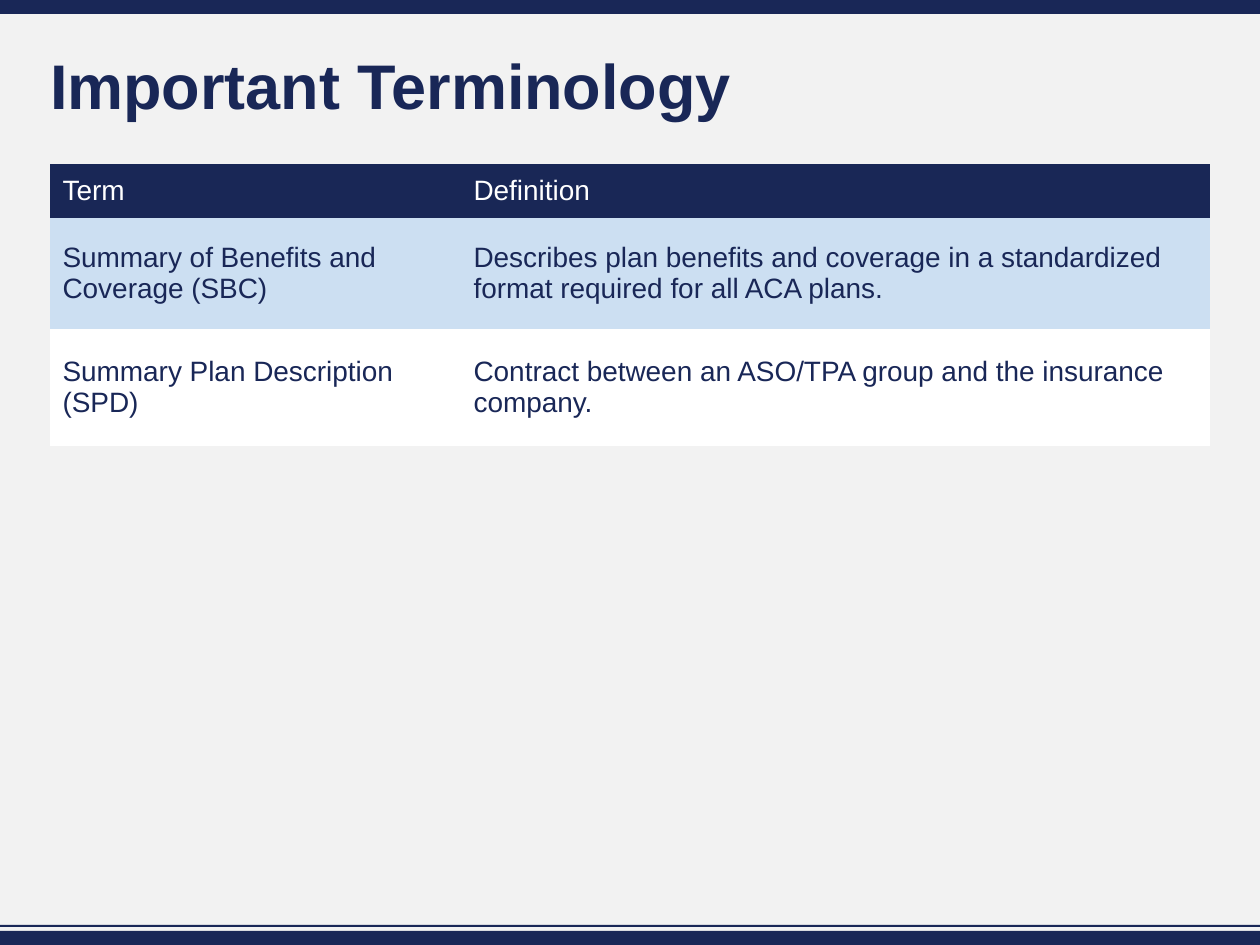
"""Build the Important Terminology slide with its table of terms."""
from pptx import Presentation
from pptx.dml.color import RGBColor
from pptx.enum.shapes import MSO_SHAPE
from pptx.enum.text import MSO_ANCHOR, PP_ALIGN
from pptx.util import Pt

TITLE = "Important Terminology"
ROWS = [
    ("Term", "Definition"),
    ("Summary of Benefits and Coverage (SBC)",
     "Describes plan benefits and coverage in a standardized format required for all ACA plans."),
    ("Summary Plan Description (SPD)",
     "Contract between an ASO/TPA group and the insurance company."),
]

NAVY = RGBColor(0x19, 0x27, 0x57)
HEADER_NAVY = RGBColor(0x19, 0x27, 0x56)
PALE_BLUE = RGBColor(0xCC, 0xDF, 0xF2)
WHITE = RGBColor(0xFF, 0xFF, 0xFF)
LIGHT_GREY = RGBColor(0xF2, 0xF2, 0xF2)
ROW_STYLES = [(HEADER_NAVY, WHITE), (PALE_BLUE, NAVY), (WHITE, NAVY)]

FONT = "Arial"
PX = 914400 // 126
PAGE_WIDTH, PAGE_HEIGHT = 1260, 945
MARGIN = 50
CONTENT_WIDTH = PAGE_WIDTH - 2 * MARGIN
BAR_HEIGHT = 14
BARS = [(0, BAR_HEIGHT), (PAGE_HEIGHT - BAR_HEIGHT, BAR_HEIGHT), (925, 2)]
TABLE_TOP = 164
COLUMN_WIDTHS = [411, CONTENT_WIDTH - 411]
ROW_HEIGHTS = [54, 111, 117]


def style_font(font, size, color, bold=False):
    font.name = FONT
    font.size = Pt(size)
    font.color.rgb = color
    font.bold = bold


def add_bar(page, top, height):
    bar = page.shapes.add_shape(MSO_SHAPE.RECTANGLE, 0, top * PX, PAGE_WIDTH * PX, height * PX)
    bar.shadow.inherit = False
    bar.fill.solid()
    bar.fill.fore_color.rgb = NAVY
    bar.line.fill.background()


def set_title(page):
    title = page.shapes.title
    title.left, title.top = MARGIN * PX, 50 * PX
    title.width, title.height = CONTENT_WIDTH * PX, 78 * PX
    frame = title.text_frame
    frame.text = TITLE
    frame.word_wrap = True
    frame.vertical_anchor = MSO_ANCHOR.MIDDLE
    frame.margin_left = frame.margin_right = frame.margin_top = frame.margin_bottom = 0
    paragraph = frame.paragraphs[0]
    paragraph.alignment = PP_ALIGN.LEFT
    paragraph.line_spacing = 0.9
    style_font(paragraph.runs[0].font, 36, NAVY, bold=True)


def add_terms_table(page):
    table = page.shapes.add_table(
        len(ROWS), len(COLUMN_WIDTHS), MARGIN * PX, TABLE_TOP * PX,
        CONTENT_WIDTH * PX, sum(ROW_HEIGHTS) * PX).table
    table.first_row = table.horz_banding = False
    for column, width in zip(table.columns, COLUMN_WIDTHS):
        column.width = width * PX
    for row, height, texts, (fill, color) in zip(table.rows, ROW_HEIGHTS, ROWS, ROW_STYLES):
        row.height = height * PX
        for cell, text in zip(row.cells, texts):
            cell.fill.solid()
            cell.fill.fore_color.rgb = fill
            cell.vertical_anchor = MSO_ANCHOR.MIDDLE
            cell.text_frame.text = text
            style_font(cell.text_frame.paragraphs[0].runs[0].font, 16, color)
    table_style = table._tbl.tblPr.find(
        "{http://schemas.openxmlformats.org/drawingml/2006/main}tableStyleId")
    table_style.text = "{2D5ABB26-0587-4C30-8999-92F81FD0307C}"


def main():
    deck = Presentation()
    deck.slide_width, deck.slide_height = PAGE_WIDTH * PX, PAGE_HEIGHT * PX
    page = deck.slides.add_slide(deck.slide_layouts[5])
    page.background.fill.solid()
    page.background.fill.fore_color.rgb = LIGHT_GREY
    for top, height in BARS:
        add_bar(page, top, height)
    add_terms_table(page)
    set_title(page)
    deck.save("out.pptx")


if __name__ == "__main__":
    main()
